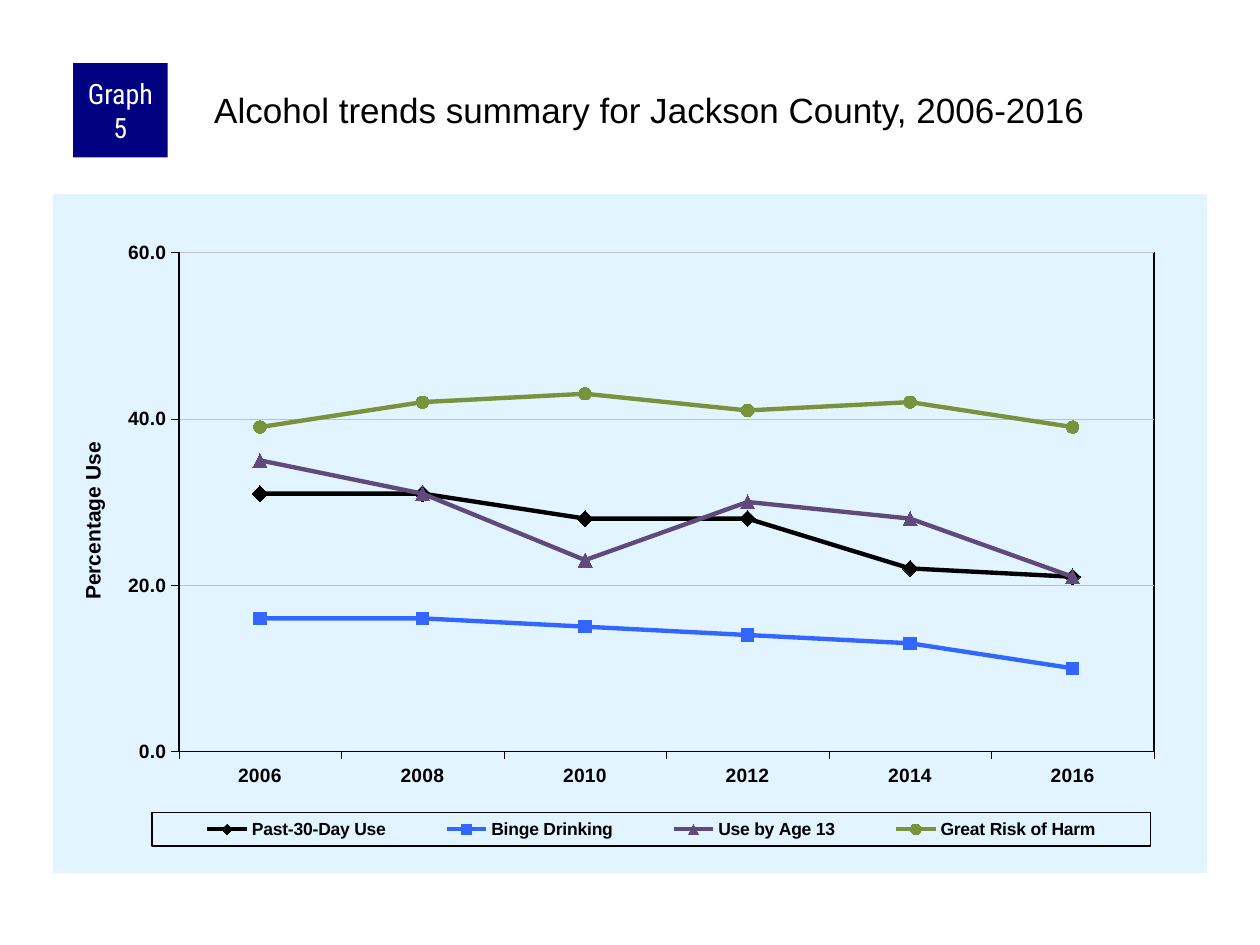
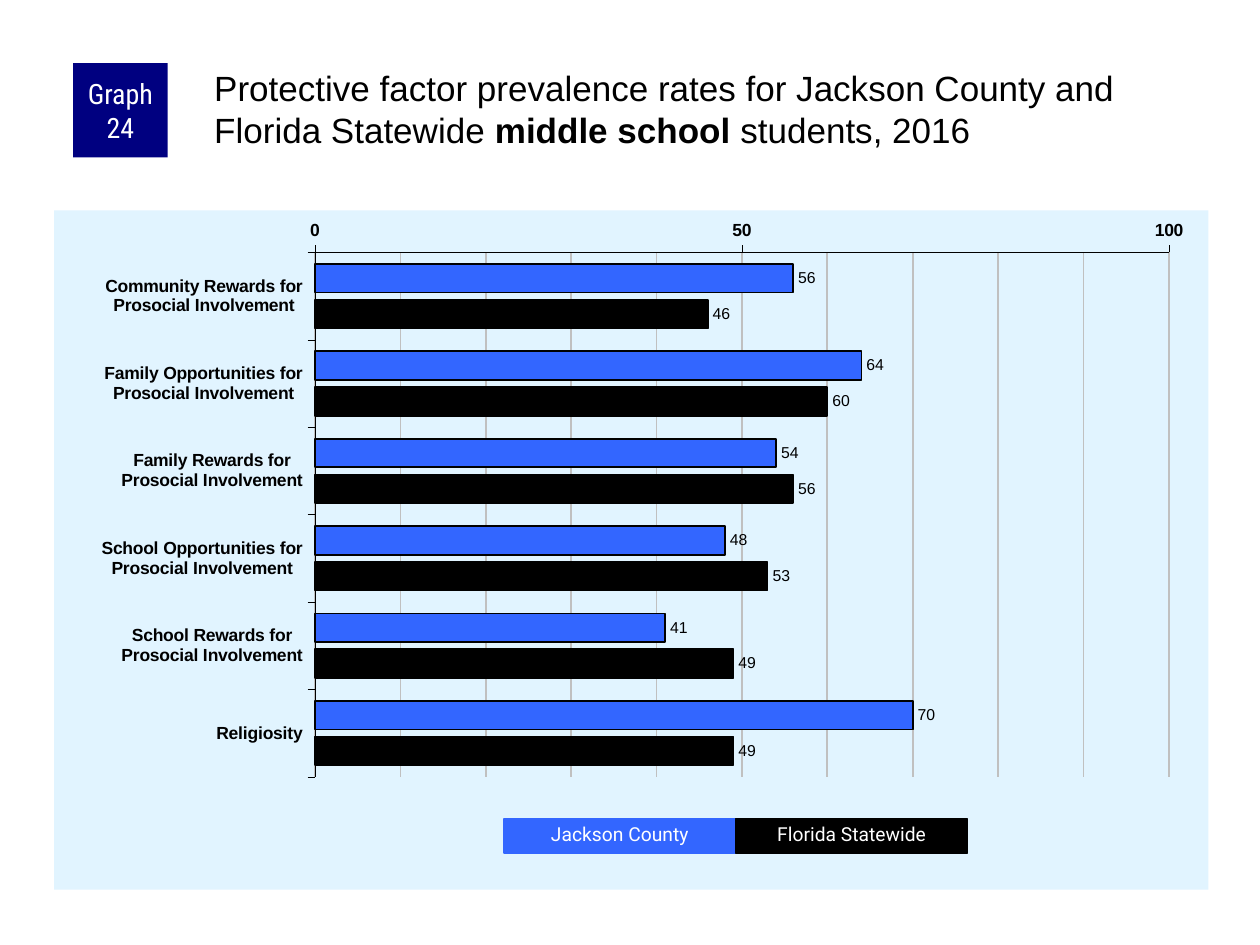
"""Build two graph slides on alcohol trends and protective factors for Jackson County."""
from copy import deepcopy
from dataclasses import dataclass

from lxml.etree import SubElement
from pptx import Presentation
from pptx.chart.data import CategoryChartData as Data
from pptx.dml.color import RGBColor as RGB
from pptx.enum.chart import XL_AXIS_CROSSES as Cross, XL_CHART_TYPE as Kind
from pptx.enum.chart import XL_LABEL_POSITION as Spot, XL_LEGEND_POSITION as Side
from pptx.enum.chart import XL_MARKER_STYLE as Mark, XL_TICK_MARK as Tick
from pptx.enum.shapes import MSO_SHAPE as Shape
from pptx.enum.text import MSO_ANCHOR as Anchor, MSO_AUTO_SIZE as Fit, PP_ALIGN as Align
from pptx.oxml import parse_xml
from pptx.oxml.ns import nsdecls, qn
from pptx.util import Inches, Pt


@dataclass
class Theme:
    navy: RGB = RGB.from_string("000080")
    black: RGB = RGB.from_string("000000")
    white: RGB = RGB.from_string("FFFFFF")
    blue: RGB = RGB.from_string("3366FF")
    plum: RGB = RGB.from_string("604A7B")
    olive: RGB = RGB.from_string("77933C")
    grid: RGB = RGB.from_string("C0C0C0")
    panel: RGB = RGB.from_string("E1F4FF")
    body: str = "Arial"
    badge: str = "Roboto Condensed"
    key: str = "Roboto"
    title_size: Pt = Pt(20)
    badge_size: Pt = Pt(16)
    key_size: Pt = Pt(11)
    axis_size: Pt = Pt(12)
    legend_size: Pt = Pt(10)
    label_size: Pt = Pt(9)


def place(parent, index, **spots):
    """Give a chart part a manual layout in fractions of the chart."""
    for old in parent.findall(qn("c:layout")):
        parent.remove(old)
    layout = parse_xml(f"<c:layout {nsdecls('c')}><c:manualLayout/></c:layout>")
    for tag, val in spots.items():
        SubElement(layout[0], qn(f"c:{tag}")).set("val", str(val))
    parent.insert(index, layout)


def paint(prior, fill=None, edge=None):
    """Add fill and outline after the given chart element."""
    solid = '<a:solidFill><a:srgbClr val="{}"/></a:solidFill>'
    inside = solid.format(fill) if fill else "<a:noFill/>"
    outline = solid.format(edge) if edge else "<a:noFill/>"
    prior.addnext(parse_xml(f"<c:spPr {nsdecls('c', 'a')}>{inside}"
                            f'<a:ln w="{Pt(0.75)}">{outline}</a:ln></c:spPr>'))


look = Theme()
deck = Presentation()
deck.slide_width, deck.slide_height = Inches(10), Inches(7.5)

trends = [
    ("Past-30-Day Use", [31, 31, 28, 28, 22, 21], look.black, Mark.DIAMOND, 9),
    ("Binge Drinking", [16, 16, 15, 14, 13, 10], look.blue, Mark.SQUARE, 7),
    ("Use by Age 13", [35, 31, 23, 30, 28, 21], look.plum, Mark.TRIANGLE, 8),
    ("Great Risk of Harm", [39, 42, 43, 41, 42, 39], look.olive, Mark.CIRCLE, 7),
]
rates = [
    ("Jackson County", [56, 64, 54, 48, 41, 70], look.blue),
    ("Florida Statewide", [46, 60, 56, 53, 49, 49], look.black),
]
years = [str(year) for year in range(2006, 2017, 2)]
groups = ["Community Rewards", "Family Opportunities", "Family Rewards",
          "School Opportunities", "School Rewards"]
factors = [f"{group} for\nProsocial Involvement" for group in groups] + ["Religiosity"]

pages = [
    ("Graph 5", [("Alcohol trends summary for Jackson County, 2006-2016", False)], 0.67,
     Kind.LINE_MARKERS, (0.42, 1.54), years, trends, (0.109, 0.086, 0.845, 0.735),
     (60, 20, 11, 0.25)),
    ("Graph 24", [("Protective factor prevalence rates for Jackson County and Florida Statewide ", False),
                  ("middle school ", True), ("students, 2016", False)], 0.5,
     Kind.BAR_CLUSTERED, (0.43, 1.67), factors, rates, (0.226, 0.062, 0.74, 0.772),
     (100, 50, 10, 1)),
]
charts = []

for tag, words, top, kind, spot, cats, rows, plot, scale in pages:
    slide = deck.slides.add_slide(deck.slide_layouts[5])
    title = slide.shapes.title
    title.left, title.top = Inches(1.67), Inches(top)
    title.width, title.height = Inches(7.92), Inches(0.83)
    frame = title.text_frame
    frame.word_wrap, frame.auto_size = True, Fit.NONE
    frame.vertical_anchor = Anchor.TOP
    frame.margin_left = frame.margin_top = Inches(0.03)
    frame.margin_right = frame.margin_bottom = 0
    para = frame.paragraphs[0]
    para.alignment = Align.LEFT
    para.font.name, para.font.size = look.body, look.title_size
    para.font.color.rgb = look.black
    for text, bold in words:
        run = para.add_run()
        run.text = text
        if bold:
            run.font.bold = True

    badge = slide.shapes.add_shape(Shape.RECTANGLE, Inches(0.58), Inches(0.5),
                                   Inches(0.75), Inches(0.75))
    badge.shadow.inherit = False
    badge.fill.solid()
    badge.fill.fore_color.rgb = look.navy
    badge.line.fill.background()
    frame = badge.text_frame
    frame.word_wrap = True
    frame.vertical_anchor = Anchor.MIDDLE
    frame.margin_left = frame.margin_right = Inches(0.05)
    frame.margin_top = frame.margin_bottom = 0
    frame.text = tag
    para = frame.paragraphs[0]
    para.alignment = Align.CENTER
    para.font.name, para.font.size = look.badge, look.badge_size
    para.font.color.rgb = look.white

    data = Data()
    data.categories = cats
    for name, vals, *_ in rows:
        data.add_series(name, vals)
    chart = slide.shapes.add_chart(kind, Inches(spot[0]), Inches(spot[1]),
                                   Inches(9.16), Inches(5.39), data).chart
    charts.append(chart)
    chart.has_title = chart.has_legend = False
    chart.font.name, chart.font.size = look.body, look.axis_size
    chart.font.color.rgb = look.black
    chart.plots[0].vary_by_categories = False
    root = chart._chartSpace.find(qn("c:chart"))
    paint(root, look.panel)
    area = root.find(qn("c:plotArea"))
    place(area, 0, layoutTarget="inner", xMode="edge", yMode="edge",
          **dict(zip("xywh", plot)))

    high, step, size, width = scale
    for axis in (chart.category_axis, chart.value_axis):
        axis.major_tick_mark, axis.minor_tick_mark = Tick.OUTSIDE, Tick.NONE
        axis.format.line.color.rgb = look.black
        axis.format.line.width = Pt(0.25)
        font = axis.tick_labels.font
        font.name, font.size, font.bold = look.body, Pt(size), True
        font.color.rgb = look.black
    axis = chart.value_axis
    axis.minimum_scale, axis.maximum_scale, axis.major_unit = 0, high, step
    axis.has_major_gridlines = True
    axis.major_gridlines.format.line.color.rgb = look.grid
    axis.major_gridlines.format.line.width = Pt(width)

trend, rate = charts

for line, (_, _, hue, mark, size) in zip(trend.series, trends):
    line.smooth = False
    line.format.line.color.rgb = hue
    line.format.line.width = Pt(2.5)
    line.marker.style, line.marker.size = mark, size
    line.marker.format.fill.solid()
    line.marker.format.fill.fore_color.rgb = hue
    line.marker.format.line.color.rgb = hue

axis = trend.value_axis
axis.tick_labels.number_format = "0.0"
axis.tick_labels.number_format_is_linked = False
name = axis.axis_title
name.text_frame.text = "Percentage Use"
font = name.text_frame.paragraphs[0].font
font.name, font.size, font.bold = look.body, look.axis_size, True
font.color.rgb = look.black
place(name._element, 1, xMode="edge", yMode="edge", x=0.02, y=0.36)
paint(trend._chartSpace.find(qn("c:chart")).find(qn("c:plotArea"))[-1], edge=look.black)

trend.has_legend = True
legend = trend.legend
legend.position, legend.include_in_layout = Side.BOTTOM, False
legend.font.name, legend.font.size, legend.font.bold = look.body, look.legend_size, True
legend.font.color.rgb = look.black
place(legend._element, 1, xMode="edge", yMode="edge", x=0.086, y=0.911, w=0.865, h=0.049)
paint(legend._element.find(qn("c:overlay")), edge=look.black)

rate.plots[0].gap_width, rate.plots[0].overlap = 80, -25
rate.category_axis.reverse_order = True
rate.category_axis.crosses = Cross.MAXIMUM
axis = rate.value_axis
axis.minor_unit = 10
axis.has_minor_gridlines = True
major, minor = (axis._element.find(qn(f"c:{size}Gridlines")) for size in ("major", "minor"))
minor.append(deepcopy(major[0]))

for i, (bars, (name, _, hue)) in enumerate(zip(rate.series, rates)):
    bars.invert_if_negative = False
    bars.format.fill.solid()
    bars.format.fill.fore_color.rgb = hue
    bars.format.line.color.rgb = look.black
    bars.format.line.width = Pt(1)
    tags = bars.data_labels
    tags.show_value, tags.position = True, Spot.OUTSIDE_END
    tags.font.name, tags.font.size = look.body, look.label_size
    tags.font.color.rgb = look.black

    key = slide.shapes.add_shape(Shape.RECTANGLE, Inches(4 + 1.84 * i), Inches(6.5),
                                 Inches(1.84), Inches(0.27))
    key.shadow.inherit = False
    key.fill.solid()
    key.fill.fore_color.rgb = hue
    key.line.color.rgb = hue
    key.line.width = Pt(0.75)
    frame = key.text_frame
    frame.word_wrap, frame.auto_size = True, Fit.SHAPE_TO_FIT_TEXT
    frame.vertical_anchor = Anchor.TOP
    frame.text = name
    para = frame.paragraphs[0]
    para.alignment, para.line_spacing = Align.CENTER, 0.9
    para.font.name, para.font.size = look.key, look.key_size
    para.font.color.rgb = look.white

deck.save("out.pptx")
